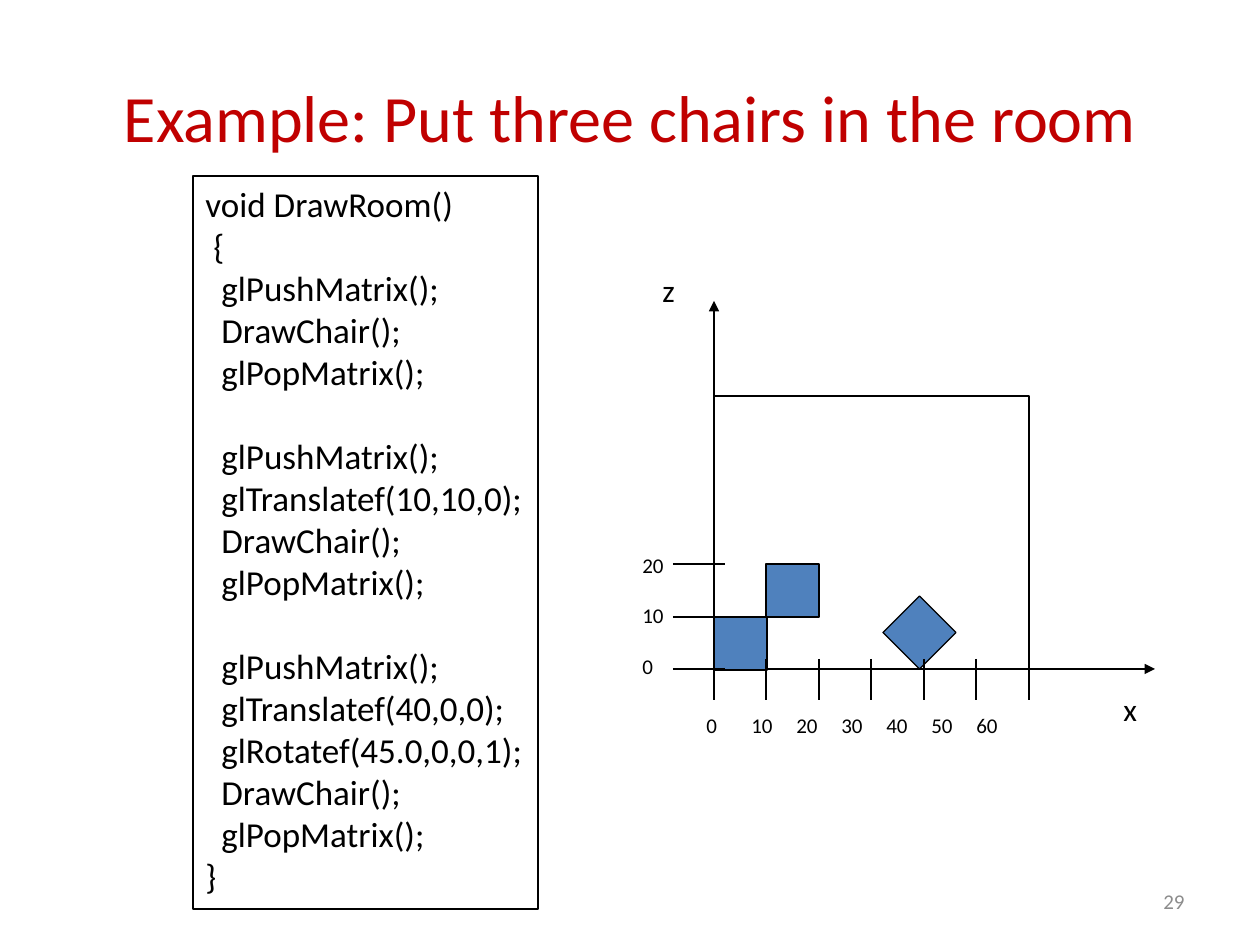
from typing import NamedTuple

from lxml.etree import SubElement
from pptx import Presentation
from pptx.dml.color import RGBColor
from pptx.enum.shapes import MSO_CONNECTOR, MSO_SHAPE
from pptx.enum.text import MSO_ANCHOR, PP_ALIGN
from pptx.oxml.ns import qn
from pptx.util import Emu, Pt

BLACK, BLUE, RED, GRAY = "000000", "4F81BD", "C00000", "8C8C8C"
X0, Y0 = 714, 669  # origin of the axes
CHAIR = 53


class Box(NamedTuple):
    x: int
    y: int
    w: int
    h: int


class Line(NamedTuple):
    x1: int
    y1: int
    x2: int
    y2: int
    arrow: bool = False


class Para(NamedTuple):
    text: str
    indent: int = 0
    before: float = 0


class Label(NamedTuple):
    box: Box
    paras: list[Para]
    size: float
    color: str = BLACK
    align: PP_ALIGN = PP_ALIGN.LEFT
    anchor: MSO_ANCHOR = MSO_ANCHOR.TOP
    wrap: bool = False


def px(n: int) -> Emu:
    return Emu(round(n * 914400 / 126))


def rgb(color: str) -> RGBColor:
    return RGBColor.from_string(color)


def tick(i: int) -> int:
    """Distance of the i-th tick from the origin."""
    return i * 105 // 2


def outline(sp) -> None:
    sp.line.color.rgb = rgb(BLACK)
    sp.line.width = Pt(0.75)


def add_shape(s, kind: MSO_SHAPE, box: Box, fill: str | None = None):
    sp = s.shapes.add_shape(kind, *map(px, box))
    sp.shadow.inherit = False
    if fill:
        sp.fill.solid()
        sp.fill.fore_color.rgb = rgb(fill)
    else:
        sp.fill.background()
    outline(sp)
    return sp


def add_line(s, line: Line) -> None:
    sp = s.shapes.add_connector(MSO_CONNECTOR.STRAIGHT, *map(px, line[:4]))
    outline(sp)
    if line.arrow:
        SubElement(sp.line._get_or_add_ln(), qn("a:tailEnd"), type="triangle")
    SubElement(sp._element.spPr, qn("a:effectLst"))


def add_label(s, label: Label):
    sp = s.shapes.add_textbox(*map(px, label.box))
    tf = sp.text_frame
    tf.word_wrap = label.wrap
    tf.vertical_anchor = label.anchor
    for i, para in enumerate(label.paras):
        p = tf.add_paragraph() if i else tf.paragraphs[0]
        p.alignment = label.align
        p.space_before = Pt(para.before)
        if para.indent:
            p._p.get_or_add_pPr().set("marL", str(px(para.indent)))
        r = p.add_run()
        r.text = para.text
        r.font.name = "Calibri"
        r.font.size = Pt(label.size)
        r.font.color.rgb = rgb(label.color)
    return sp


def add_tabs(sp, step: int, count: int) -> None:
    pPr = sp.text_frame.paragraphs[0]._p.get_or_add_pPr()
    tabs = SubElement(pPr, qn("a:tabLst"))
    for i in range(1, count + 1):
        SubElement(tabs, qn("a:tab"), pos=str(px(i * step)), algn="l")


def code_paras() -> list[Para]:
    blocks = [
        [],
        ["glTranslatef(10,10,0);"],
        ["glTranslatef(40,0,0);", "glRotatef(45.0,0,0,1);"],
    ]
    paras = [Para("void DrawRoom()"), Para("{", 8)]
    for i, moves in enumerate(blocks):
        calls = ["glPushMatrix();", *moves, "DrawChair();", "glPopMatrix();"]
        for j, call in enumerate(calls):
            paras.append(Para(call, 16, 24 if i and not j else 0))
    return paras + [Para("}")]


def main() -> None:
    prs = Presentation()
    prs.slide_width, prs.slide_height = px(1260), px(945)
    s = prs.slides.add_slide(prs.slide_layouts[6])

    add_label(s, Label(Box(903, 876, 294, 50), [Para("29")], 12, GRAY,
                       PP_ALIGN.RIGHT, MSO_ANCHOR.MIDDLE, True))
    add_label(s, Label(Box(63, 38, 1134, 157),
                       [Para("Example: Put three chairs in the room")], 37.8, RED,
                       PP_ALIGN.CENTER, MSO_ANCHOR.MIDDLE, True))

    add_shape(s, MSO_SHAPE.RECTANGLE, Box(X0, Y0 - 273, tick(6), 273))
    add_line(s, Line(X0, Y0, X0 + 441, Y0, True))
    add_line(s, Line(X0, Y0, X0, Y0 - 368, True))
    add_label(s, Label(Box(1111, 684, 42, 50), [Para("x")], 18))
    add_label(s, Label(Box(650, 265, 42, 50), [Para("z")], 18))

    for i in range(2):
        box = Box(X0 + tick(i), Y0 - tick(i + 1), CHAIR, CHAIR)
        add_shape(s, MSO_SHAPE.RECTANGLE, box, BLUE)
    add_shape(s, MSO_SHAPE.DIAMOND, Box(883, Y0 - 73, 73, 73), BLUE)

    for i in range(7):
        add_line(s, Line(X0 + tick(i), Y0 - 10, X0 + tick(i), Y0 + 31))
    for i in range(3):
        add_line(s, Line(X0 - 41, Y0 - tick(i), X0 + 11, Y0 - tick(i)))

    x_values = "\t".join(str(v) for v in range(0, 70, 10))
    sp = add_label(s, Label(Box(694, 706, 365, 38), [Para(x_values)], 12))
    add_tabs(sp, 45, 6)
    z_values = [Para("20"), Para("10", before=14.6), Para("0", before=14.6)]
    add_label(s, Label(Box(630, 546, 49, 139), z_values, 12))

    outline(add_label(s, Label(Box(193, 176, 345, 733), code_paras(), 20)))
    prs.save("out.pptx")


if __name__ == "__main__":
    main()
